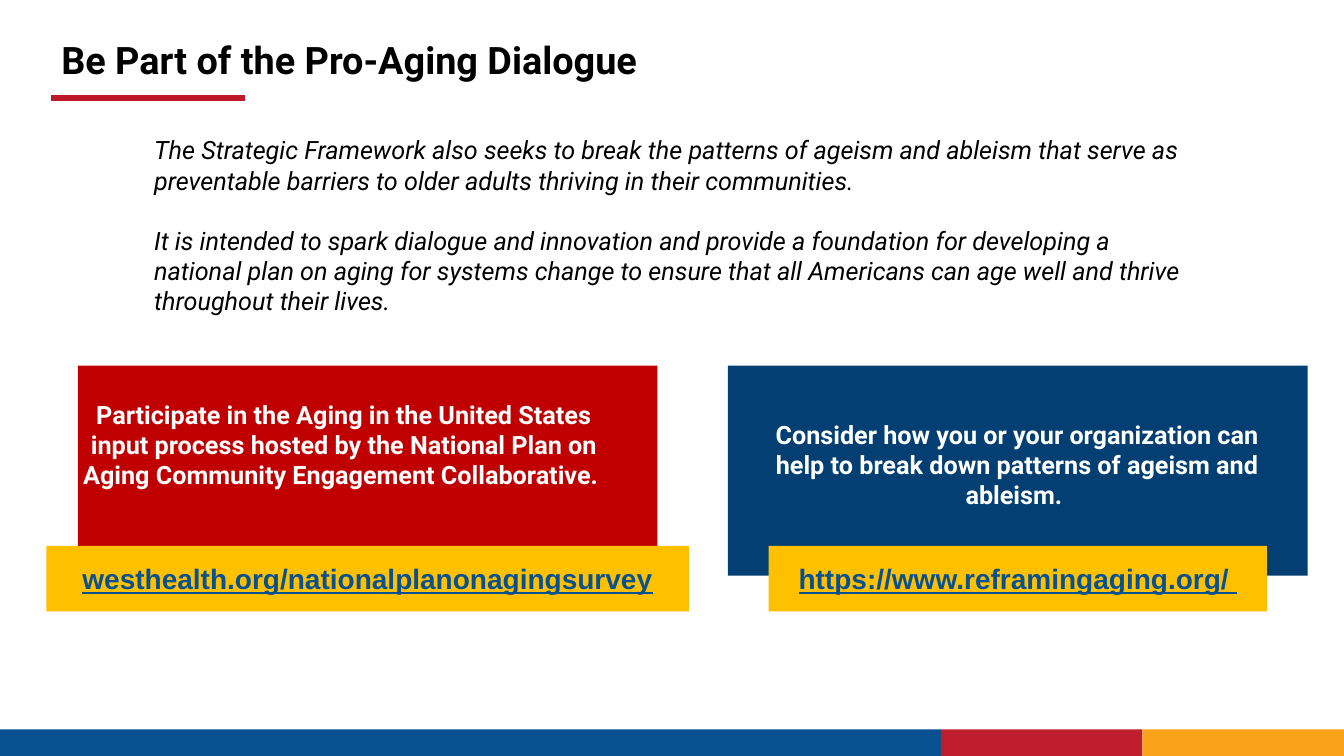
from lxml.etree import SubElement
from pptx import Presentation
from pptx.dml.color import RGBColor
from pptx.enum.shapes import MSO_CONNECTOR, MSO_SHAPE
from pptx.enum.text import MSO_ANCHOR, PP_ALIGN
from pptx.oxml.ns import qn
from pptx.util import Pt

BLACK = RGBColor(0x00, 0x00, 0x00)
WHITE = RGBColor(0xFF, 0xFF, 0xFF)
BLUE = RGBColor(0x07, 0x51, 0x90)
NAVY = RGBColor(0x04, 0x3F, 0x73)
RED = RGBColor(0xC0, 0x00, 0x00)
RULE_RED = RGBColor(0xBE, 0x19, 0x29)
BAND_RED = RGBColor(0xBE, 0x1E, 0x2D)
BAND_ORANGE = RGBColor(0xF9, 0xA2, 0x1A)
YELLOW = RGBColor(0xFF, 0xC0, 0x00)

PAGE_WIDTH, PAGE_HEIGHT = 960, 540
BAND_TOP = 521
CARD_TOP, CARD_WIDTH, CARD_HEIGHT = 261.2, 414, 150
LINK_TOP, LINK_HEIGHT, LINK_TEXT_HEIGHT = 390, 46.8, 31.5
MESSAGE_WIDTH, MESSAGE_HEIGHT = 389, 94.5

TITLE = "Be Part of the Pro-Aging Dialogue"
INTRO = [
    "The Strategic Framework also seeks to break the patterns of ageism and ableism "
    "that serve as preventable barriers to older adults thriving in their communities.",
    "It is intended to spark dialogue and innovation and provide a foundation for "
    "developing a national plan on aging for systems change to ensure that all "
    "Americans can age well and thrive throughout their lives.",
]
# left, width, colour
BANDS = [(0, 672, BLUE), (672, 144, BAND_RED), (816, 144, BAND_ORANGE)]
CARDS = [
    dict(left=55.6, fill=RED, message_left=51.1, message_top=281.5,
         message="Participate in the Aging in the United States input process hosted by "
                 "the National Plan on Aging Community Engagement Collaborative. ",
         link="westhealth.org/nationalplanonagingsurvey", link_width=459),
    dict(left=520, fill=NAVY, message_left=532, message_top=296,
         message="Consider how you or your organization can help to break down "
                 "patterns of ageism and ableism. ",
         link="https://www.reframingaging.org/ ", link_width=356),
]


def add_block(page, left, top, width, height, fill):
    block = page.shapes.add_shape(
        MSO_SHAPE.RECTANGLE, Pt(left), Pt(top), Pt(width), Pt(height))
    block.shadow.inherit = False
    block.fill.solid()
    block.fill.fore_color.rgb = fill
    block.line.fill.background()


def add_text(page, left, top, width, height, lines, size, color, font="Roboto",
             bold=False, italic=False, underline=False,
             align=PP_ALIGN.LEFT, anchor=MSO_ANCHOR.TOP):
    box = page.shapes.add_textbox(Pt(left), Pt(top), Pt(width), Pt(height))
    frame = box.text_frame
    frame.word_wrap = True
    frame.vertical_anchor = anchor
    frame.text = "\n".join(lines)
    for para in frame.paragraphs:
        para.alignment = align
        para.font.name = font
        para.font.size = Pt(size)
        para.font.bold = bold
        para.font.italic = italic
        para.font.underline = underline
        para.font.color.rgb = color
    return frame


def add_card(page, card):
    add_block(page, card["left"], CARD_TOP, CARD_WIDTH, CARD_HEIGHT, card["fill"])
    add_text(page, card["message_left"], card["message_top"], MESSAGE_WIDTH,
             MESSAGE_HEIGHT, [card["message"]], 18, WHITE, bold=True,
             align=PP_ALIGN.CENTER)
    link_left = card["left"] + (CARD_WIDTH - card["link_width"]) / 2
    add_block(page, link_left, LINK_TOP, card["link_width"], LINK_HEIGHT, YELLOW)
    text_top = LINK_TOP + (LINK_HEIGHT - LINK_TEXT_HEIGHT) / 2
    add_text(page, link_left, text_top, card["link_width"], LINK_TEXT_HEIGHT,
             [card["link"]], 20, BLUE, font="Arial", bold=True, underline=True,
             align=PP_ALIGN.CENTER)


def main():
    deck = Presentation()
    deck.slide_width, deck.slide_height = Pt(PAGE_WIDTH), Pt(PAGE_HEIGHT)
    page = deck.slides.add_slide(deck.slide_layouts[6])

    for left, width, fill in BANDS:
        add_block(page, left, BAND_TOP, width, PAGE_HEIGHT - BAND_TOP, fill)

    title = add_text(page, 36.7, 18, 484, 44.6, [TITLE], 27, BLACK, bold=True,
                     anchor=MSO_ANCHOR.BOTTOM)
    title.paragraphs[0].line_spacing = 0.9
    rule = page.shapes.add_connector(
        MSO_CONNECTOR.STRAIGHT, Pt(36.7), Pt(70), Pt(175), Pt(70))
    rule.line.color.rgb = RULE_RED
    rule.line.width = Pt(4.5)
    SubElement(rule.line._get_or_add_ln().getparent(), qn("a:effectLst"))

    intro = add_text(page, 103, 95, 754.6, 131.8, INTRO, 18, BLACK, italic=True,
                     anchor=MSO_ANCHOR.MIDDLE)
    intro.paragraphs[1].space_before = Pt(21.5)

    for card in CARDS:
        add_card(page, card)

    deck.save("out.pptx")


if __name__ == "__main__":
    main()
